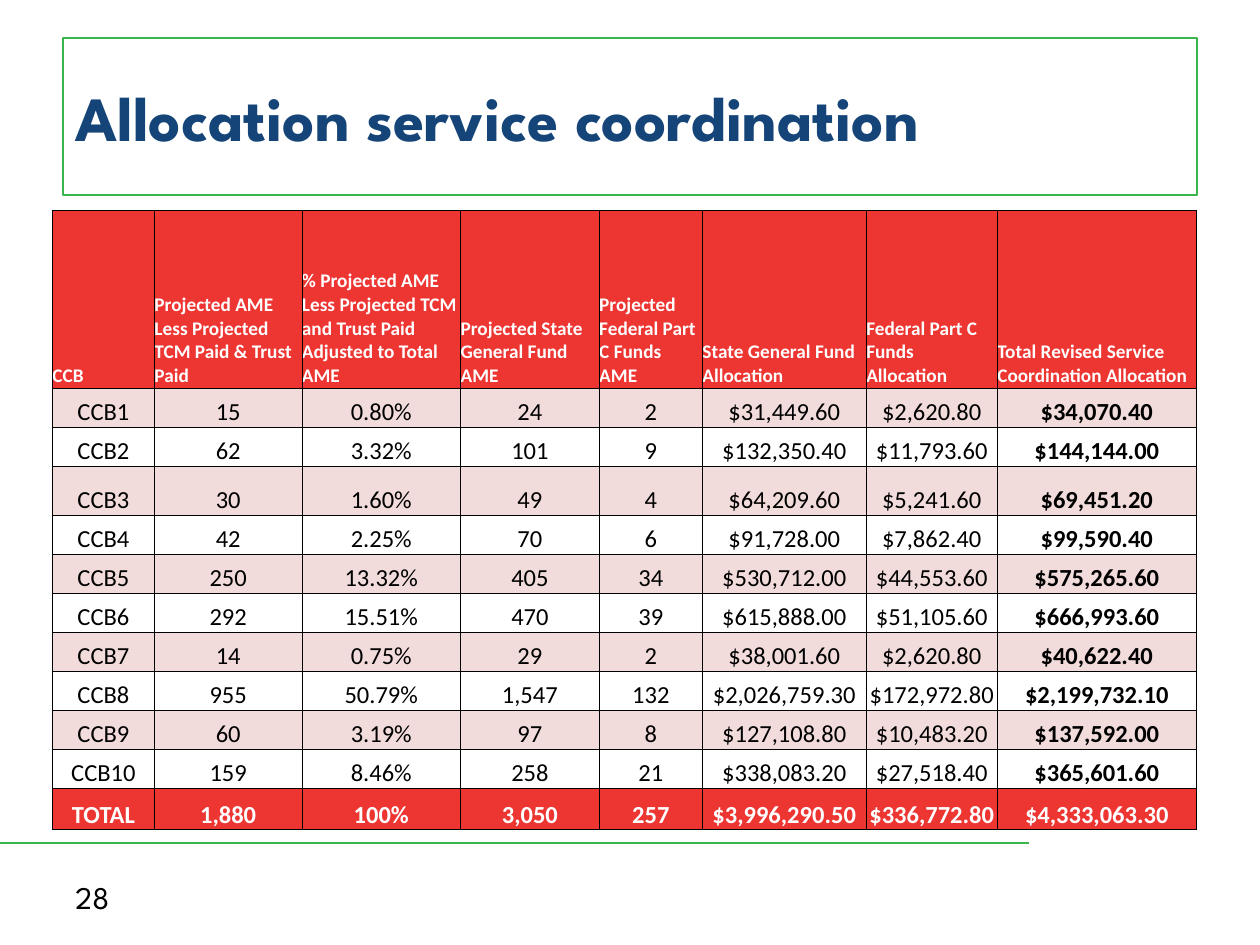
from lxml.etree import SubElement
from pptx import Presentation
from pptx.dml.color import RGBColor
from pptx.enum.shapes import MSO_CONNECTOR, MSO_SHAPE
from pptx.enum.text import MSO_ANCHOR, PP_ALIGN
from pptx.oxml.ns import qn
from pptx.util import Pt

TITLE = "Allocation service coordination"
PAGE_NUMBER = "28"
HEADINGS = (
    "CCB",
    "Projected AME Less Projected TCM Paid & Trust Paid",
    "% Projected AME Less Projected TCM and Trust Paid Adjusted to Total AME",
    "Projected State General Fund AME",
    "Projected Federal Part C Funds AME",
    "State General Fund Allocation",
    "Federal Part C Funds Allocation",
    "Total Revised Service Coordination Allocation",
)
ALLOCATIONS = [
    ("CCB1", "15", "0.80%", "24", "2", "$31,449.60", "$2,620.80", "$34,070.40"),
    ("CCB2", "62", "3.32%", "101", "9", "$132,350.40", "$11,793.60", "$144,144.00"),
    ("CCB3", "30", "1.60%", "49", "4", "$64,209.60", "$5,241.60", "$69,451.20"),
    ("CCB4", "42", "2.25%", "70", "6", "$91,728.00", "$7,862.40", "$99,590.40"),
    ("CCB5", "250", "13.32%", "405", "34", "$530,712.00", "$44,553.60", "$575,265.60"),
    ("CCB6", "292", "15.51%", "470", "39", "$615,888.00", "$51,105.60", "$666,993.60"),
    ("CCB7", "14", "0.75%", "29", "2", "$38,001.60", "$2,620.80", "$40,622.40"),
    ("CCB8", "955", "50.79%", "1,547", "132", "$2,026,759.30", "$172,972.80", "$2,199,732.10"),
    ("CCB9", "60", "3.19%", "97", "8", "$127,108.80", "$10,483.20", "$137,592.00"),
    ("CCB10", "159", "8.46%", "258", "21", "$338,083.20", "$27,518.40", "$365,601.60"),
]
TOTALS = ("TOTAL", "1,880", "100%", "3,050", "257", "$3,996,290.50", "$336,772.80", "$4,333,063.30")

COLUMN_WIDTHS = (58.3, 84.3, 90.7, 79.2, 59, 93.6, 74.9, 113.8)
HEADING_HEIGHT, ROW_HEIGHT, TALL_HEIGHT, TOTAL_HEIGHT = 101.5, 22.3, 28.1, 23.8
TALL_ROW = "CCB3"

GREEN = RGBColor(0x39, 0xB5, 0x4A)
NAVY = RGBColor(0x15, 0x45, 0x78)
RED = RGBColor(0xED, 0x35, 0x32)
PINK = RGBColor(0xF2, 0xDC, 0xDB)
BLACK = RGBColor(0, 0, 0)
WHITE = RGBColor(0xFF, 0xFF, 0xFF)
HEADLINE_FONT, TABLE_FONT = "League Spartan", "Calibri"


def style(paragraph, face, size, color, bold=False, align=PP_ALIGN.LEFT):
    paragraph.alignment = align
    font = paragraph.font
    font.name, font.size, font.bold = face, Pt(size), bold
    font.color.rgb = color


def add_borders(cell, widths):
    properties = cell._tc.get_or_add_tcPr()
    for side, width in widths.items():
        border = SubElement(properties, qn(f"a:ln{side}"), w=str(Pt(width)))
        fill = SubElement(border, qn("a:solidFill"))
        SubElement(fill, qn("a:srgbClr"), val=str(BLACK))


prs = Presentation()
prs.slide_width, prs.slide_height = Pt(720), Pt(540)
slide = prs.slides.add_slide(prs.slide_layouts[6])

# Footer rule
rule = slide.shapes.add_connector(MSO_CONNECTOR.STRAIGHT, 0, Pt(481.7), Pt(588), Pt(481.7))
rule.line.color.rgb = GREEN
rule.line.width = Pt(1.5)
SubElement(rule._element.spPr, qn("a:effectLst"))

# Page number
number = slide.shapes.add_textbox(Pt(36), Pt(498.2), Pt(168), Pt(28.8)).text_frame
number.word_wrap = True
number.vertical_anchor = MSO_ANCHOR.MIDDLE
number.text = PAGE_NUMBER
style(number.paragraphs[0], HEADLINE_FONT, 18, BLACK)

# Framed title
title = slide.shapes.add_shape(MSO_SHAPE.RECTANGLE, Pt(36), Pt(21.6), Pt(648), Pt(90))
title.shadow.inherit = False
title.fill.background()
title.line.color.rgb = GREEN
title.line.width = Pt(1)
title.text_frame.vertical_anchor = MSO_ANCHOR.MIDDLE
title.text_frame.text = TITLE
style(title.text_frame.paragraphs[0], HEADLINE_FONT, 36, NAVY, bold=True)

# Allocation table
rows = [HEADINGS, *ALLOCATIONS, TOTALS]
heights = [HEADING_HEIGHT]
heights += [TALL_HEIGHT if row[0] == TALL_ROW else ROW_HEIGHT for row in ALLOCATIONS]
heights.append(TOTAL_HEIGHT)
last_row, last_column = len(rows) - 1, len(HEADINGS) - 1

table = slide.shapes.add_table(
    len(rows), len(HEADINGS), Pt(30), Pt(120.2), Pt(sum(COLUMN_WIDTHS)), Pt(sum(heights))
).table
table.first_row = table.horz_banding = False
for column, width in zip(table.columns, COLUMN_WIDTHS):
    column.width = Pt(width)

for r, values in enumerate(rows):
    table.rows[r].height = Pt(heights[r])
    is_heading, is_total = r == 0, r == last_row
    is_red = is_heading or is_total
    for c, value in enumerate(values):
        cell = table.cell(r, c)
        cell.margin_left = cell.margin_right = cell.margin_top = cell.margin_bottom = 0
        cell.vertical_anchor = MSO_ANCHOR.BOTTOM
        add_borders(cell, {"L": 1 if c == 0 else 0.5, "R": 0.5, "T": 0.5, "B": 1 if is_total else 0.5})
        if is_red or r % 2:
            cell.fill.solid()
            cell.fill.fore_color.rgb = RED if is_red else PINK
        else:
            cell.fill.background()
        cell.text = value
        style(
            cell.text_frame.paragraphs[0],
            TABLE_FONT,
            11 if is_heading else 14,
            WHITE if is_red else BLACK,
            bold=is_red or c == last_column,
            align=PP_ALIGN.LEFT if is_heading else PP_ALIGN.CENTER,
        )

prs.save("out.pptx")
